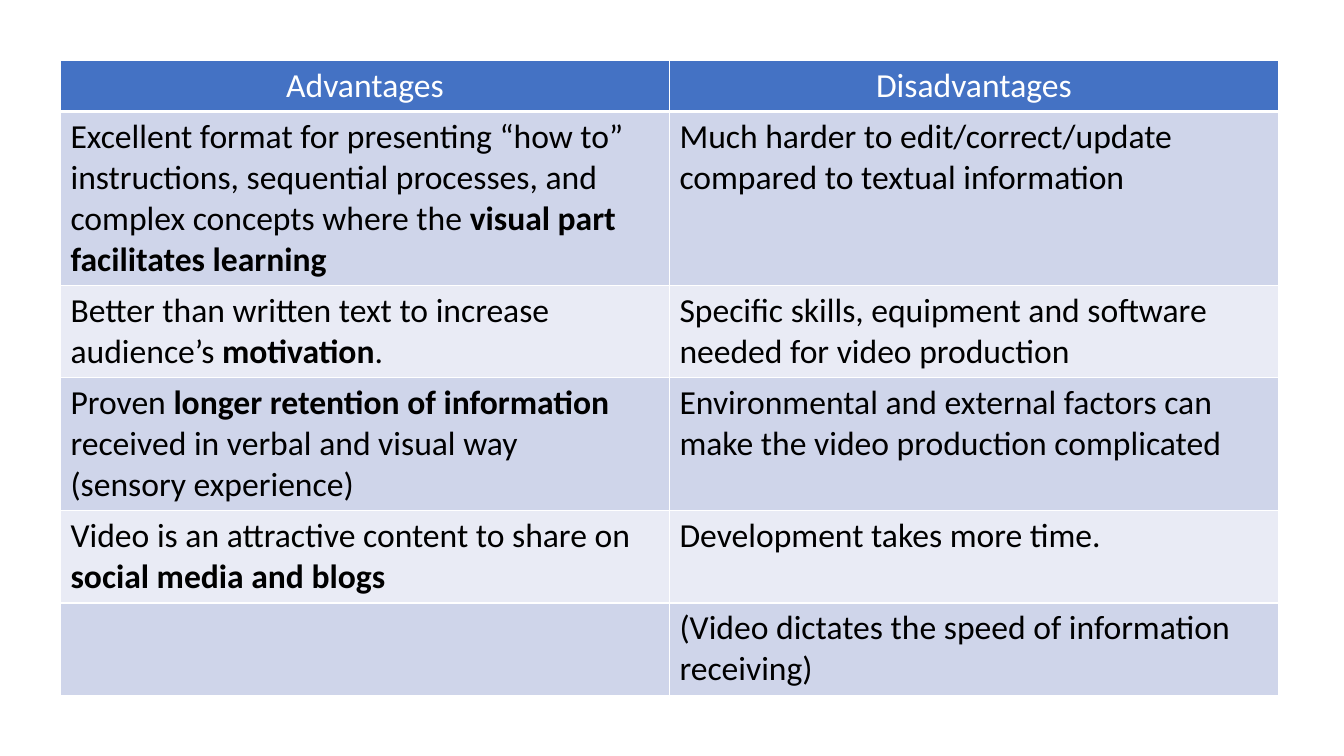
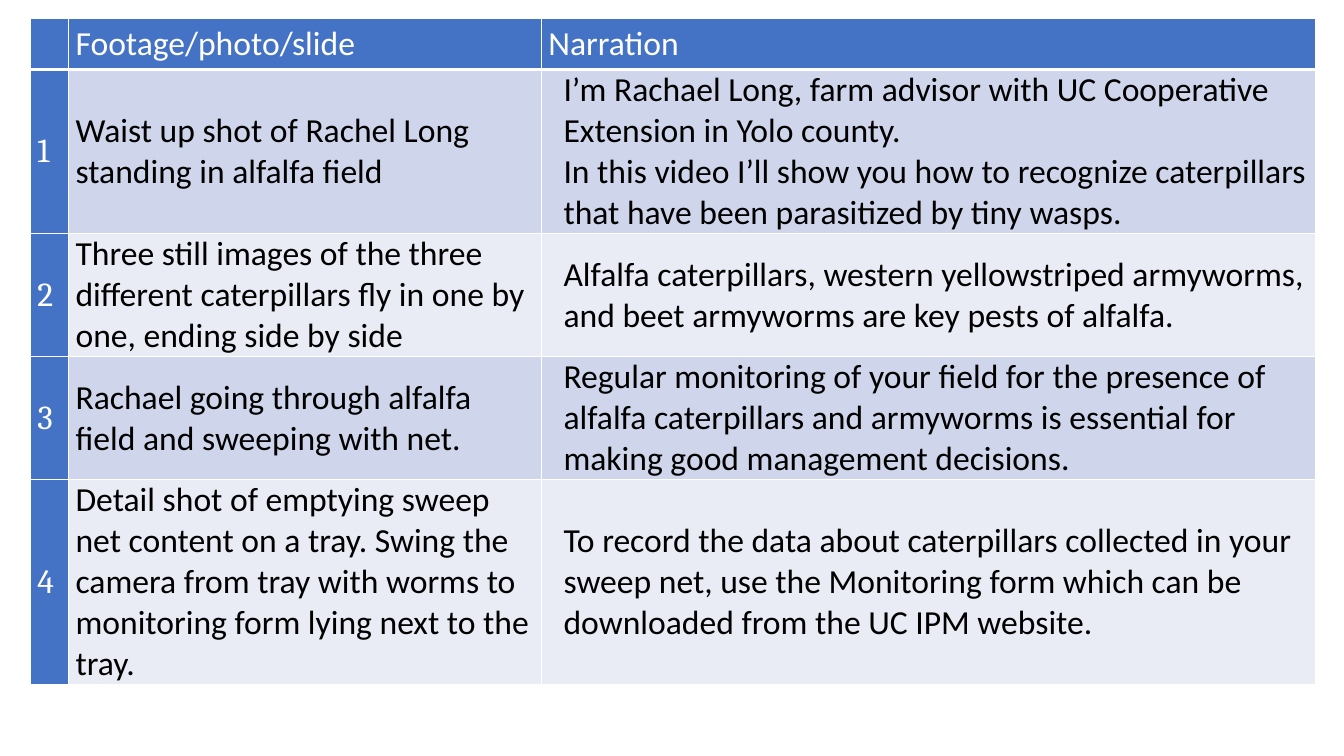
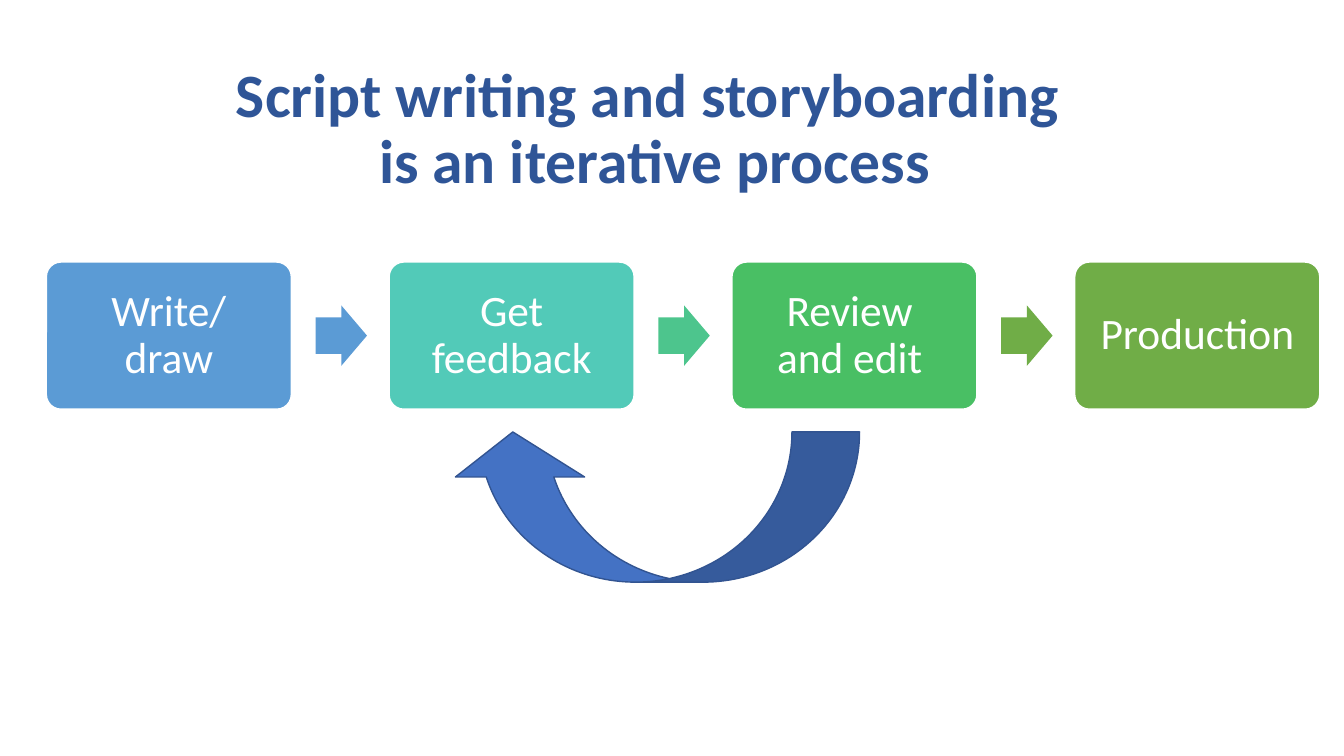
"""Build three slides on video production: two tables and a process diagram."""
from dataclasses import dataclass
from typing import Any

from lxml import etree
from pptx import Presentation
from pptx import util as u
from pptx.dml import color as dml
from pptx.enum import shapes, text
from pptx.oxml import ns

PX = 9144
FONT = "Calibri"
NUMBER_FONT = "Cambria"
WHITE, BLACK, BLUE = "FFFFFF", "000000", "4472C4"
BANDS = ("CFD5EA", "E9EBF5")
CENTER = text.PP_ALIGN.CENTER
MIDDLE = text.MSO_ANCHOR.MIDDLE


@dataclass(frozen=True)
class TextStyle:
    size: int = 24
    color: str = BLACK
    font: str = FONT
    bold: bool = False
    align: Any = None
    spacing: float | None = None
    after: int | None = None
    indent: int = 0


@dataclass(frozen=True)
class Grid:
    left: int
    top: int
    columns: tuple[int, ...]
    heights: tuple[int, ...]
    rows: tuple[tuple[str, ...], ...]
    header_align: Any = None
    numbered: bool = False


@dataclass(frozen=True)
class Step:
    label: str
    fill: str
    arrow: str | None = None


PROS_AND_CONS = Grid(
    60, 60, (604, 604), (50, 172, 91, 132, 91, 91),
    (
        ("Advantages", "Disadvantages"),
        ("Excellent format for presenting “how to” instructions, sequential processes, "
         "and complex concepts where the **visual part facilitates learning**",
         "Much harder to edit/correct/update compared to textual information"),
        ("Better than written text to increase audience’s **motivation**.",
         "Specific skills, equipment and software needed for video production"),
        ("Proven **longer retention of information **received in verbal and visual way\n"
         "(sensory experience)",
         "Environmental and external factors can make the video production complicated"),
        ("Video is an attractive content to share on **social media and blogs**",
         "Development takes more time."),
        ("", "(Video dictates the speed of information receiving)"),
    ),
    header_align=CENTER,
)

SCRIPT = Grid(
    30, 18, (38, 469, 768), (51, 163, 122, 122, 203),
    (
        ("", "Footage/photo/slide", "Narration"),
        ("1", "Waist up shot of Rachel Long standing in alfalfa field",
         "I’m Rachael Long, farm advisor with UC Cooperative Extension in Yolo county.\n"
         "In this video I’ll show you how to recognize caterpillars that have been "
         "parasitized by tiny wasps."),
        ("2", "Three still images of the three different caterpillars fly in one by one, "
         "ending side by side",
         "Alfalfa caterpillars, western yellowstriped armyworms, and beet armyworms are "
         "key pests of alfalfa."),
        ("3", "Rachael going through alfalfa field and sweeping with net.",
         "Regular monitoring of your field for the presence of alfalfa caterpillars and "
         "armyworms is essential for making good management decisions."),
        ("4", "Detail shot of emptying sweep net content on a tray. Swing the camera from "
         "tray with worms to monitoring form lying next to the tray.",
         "To record the data about caterpillars collected in your sweep net, use the "
         "Monitoring form which can be downloaded from the UC IPM website."),
    ),
    numbered=True,
)

STEPS = (
    Step("Write/draw", "5B9BD5", "5B9BD5"),
    Step("Get feedback", "52CAB8", "4DC58D"),
    Step("Review \vand edit ", "49BF64", "70AD47"),
    Step("Production", "70AD47"),
)


def px(*lengths: int) -> list[u.Emu]:
    """Turn px lengths into EMU."""
    return [u.Emu(n * PX) for n in lengths]


def rgb(value: str) -> dml.RGBColor:
    """Turn a hex string into a colour."""
    return dml.RGBColor.from_string(value)


def assign(target: Any, values: dict[str, Any]) -> None:
    """Set every given attribute on the target."""
    for name, value in values.items():
        if value is not None:
            setattr(target, name, value)


def paint(target: Any, color: str) -> None:
    """Give a shape or cell a solid fill."""
    target.fill.solid()
    target.fill.fore_color.rgb = rgb(color)


def write(tf: Any, content: str, style: TextStyle) -> None:
    """Write paragraphs split by newlines, with bold parts between double stars."""
    for i, line in enumerate(content.split("\n")):
        p = tf.add_paragraph() if i else tf.paragraphs[0]
        if style.indent:
            assign(p, {"level": 0})
            pPr = p._p.get_or_add_pPr()
            pPr.set("marL", str(style.indent * PX))
            pPr.set("indent", "0")
        assign(p, {
            "alignment": style.align,
            "line_spacing": style.spacing,
            "space_after": None if style.after is None else u.Pt(style.after),
        })
        for j, part in enumerate(line.split("**")):
            for k, piece in enumerate(part.split("\v")):
                if k:
                    p.add_line_break()
                if piece:
                    r = p.add_run()
                    r.text = piece
                    assign(r.font, {"name": style.font, "size": u.Pt(style.size),
                                    "bold": style.bold or j % 2 == 1})
                    r.font.color.rgb = rgb(style.color)


def set_borders(cell: Any, header: bool) -> None:
    """Draw white borders, heavier below a header cell."""
    tcPr = cell._tc.get_or_add_tcPr()
    for side in "LRTB":
        width = u.Pt(3 if header and side == "B" else 1)
        ln = etree.SubElement(tcPr, ns.qn(f"a:ln{side}"), w=str(int(width)))
        fill = etree.SubElement(ln, ns.qn("a:solidFill"))
        etree.SubElement(fill, ns.qn("a:srgbClr"), val=WHITE)


def cell_style(grid: Grid, row: int, column: int) -> TextStyle:
    """Choose the text style of a table cell."""
    if row == 0:
        return TextStyle(color=WHITE, align=grid.header_align)
    if grid.numbered and column == 0:
        return TextStyle(color=WHITE, font=NUMBER_FONT)
    if grid.numbered and column == 2:
        return TextStyle(indent=15, after=6 if row > 1 else None)
    return TextStyle()


def add_grid(s: Any, grid: Grid) -> None:
    """Draw a banded table."""
    box = px(grid.left, grid.top, sum(grid.columns), sum(grid.heights))
    table = s.shapes.add_table(len(grid.rows), len(grid.columns), *box).table
    for column, width in zip(table.columns, px(*grid.columns)):
        column.width = width
    for row, height in zip(table.rows, px(*grid.heights)):
        row.height = height
    side, edge = px(7, 0)
    for i, row in enumerate(grid.rows):
        for j, content in enumerate(row):
            cell = table.cell(i, j)
            set_borders(cell, i == 0)
            accent = i == 0 or (grid.numbered and j == 0)
            paint(cell, BLUE if accent else BANDS[(i - 1) % 2])
            if grid.numbered:
                assign(cell, {"vertical_anchor": MIDDLE, "margin_left": side,
                              "margin_right": side, "margin_top": edge,
                              "margin_bottom": edge})
            if content:
                write(cell.text_frame, content, cell_style(grid, i, j))


def add_shape(s: Any, kind: Any, box: tuple[int, ...], fill: str,
              adjustments: tuple[float, ...], line: str | None = None) -> Any:
    """Draw a filled preset shape, outlined when a line colour is given."""
    sp = s.shapes.add_shape(kind, *px(*box))
    sp.shadow.inherit = False
    paint(sp, fill)
    for i, value in enumerate(adjustments):
        sp.adjustments[i] = value
    if line:
        sp.line.color.rgb = rgb(line)
        sp.line.width = u.Pt(1)
    else:
        sp.line.fill.background()
    return sp


def add_process(s: Any) -> None:
    """Draw the title, the chain of steps and the arrow leading back."""
    title = s.shapes.add_textbox(*px(219, 57, 861, 145)).text_frame
    assign(title, {"word_wrap": True, "vertical_anchor": MIDDLE})
    write(title, "Script writing and storyboarding \vis an iterative process",
          TextStyle(44, "2F5597", bold=True, align=CENTER, spacing=0.9))
    kinds = shapes.MSO_SHAPE
    label_style = TextStyle(31, WHITE, align=CENTER, spacing=0.9)
    pitch = 340
    inset = px(17)[0]
    for i, step in enumerate(STEPS):
        left = 46 + i * pitch
        sp = add_shape(s, kinds.ROUNDED_RECTANGLE, (left, 260, 243, 146),
                       step.fill, (0.1,), WHITE)
        tf = sp.text_frame
        assign(tf, {"word_wrap": True, "vertical_anchor": MIDDLE,
                    "margin_left": inset, "margin_right": inset,
                    "margin_top": inset, "margin_bottom": inset})
        write(tf, step.label, label_style)
        if step.arrow:
            add_shape(s, kinds.RIGHT_ARROW, (left + 267, 303, 51, 60),
                      step.arrow, (0.6, 0.5))
    loop = add_shape(s, kinds.CURVED_LEFT_ARROW, (574, 299, 149, 408),
                     BLUE, (0.45, 0.86, 0.3), "325491")
    loop.rotation = 90


def main() -> None:
    """Build and save the presentation."""
    prs = Presentation()
    prs.slide_width, prs.slide_height = px(1333, 750)
    blank = prs.slide_layouts[6]
    for grid in (PROS_AND_CONS, SCRIPT):
        add_grid(prs.slides.add_slide(blank), grid)
    add_process(prs.slides.add_slide(blank))
    prs.save("out.pptx")


if __name__ == "__main__":
    main()
